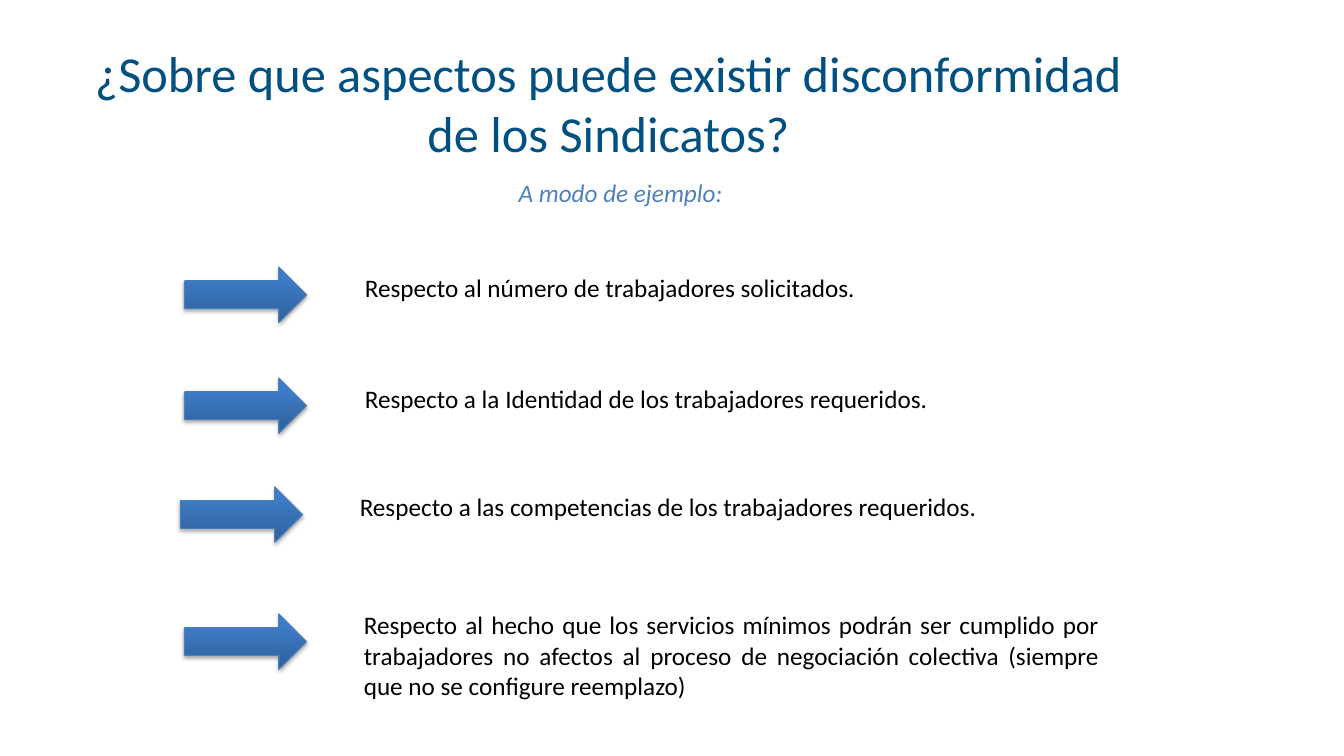
import pptx
import pptx.util
import pptx.oxml
import pptx.oxml.ns
import pptx.dml.color
import pptx.enum.shapes
import pptx.enum.text

Inches = pptx.util.Inches
ALIGN = pptx.enum.text.PP_ALIGN
ARROW_STOPS = [(0, "2F5F99"), (80, "3D7CC7"), (100, "3A7CCB")]

# Left and top of the arrow, then left, top, width and height of the text
ITEMS = [
    ((1.83, 2.65), (3.52, 2.65, 5.35, 0.4),
     "Respecto al número de trabajadores solicitados."),
    ((1.83, 3.75), (3.52, 3.75, 7.48, 0.4),
     "Respecto a la Identidad de los trabajadores requeridos."),
    ((1.79, 4.83), (3.47, 4.83, 7.76, 0.4),
     "Respecto a las competencias de los trabajadores requeridos."),
    ((1.83, 6.09), (3.51, 6, 7.49, 1.01),
     "Respecto al hecho que los servicios mínimos podrán ser cumplido por "
     "trabajadores no afectos al proceso de negociación colectiva (siempre "
     "que no se configure reemplazo)"),
]


def rgb(value):
    return pptx.dml.color.RGBColor.from_string(value)


def write(tf, text, size, color, align, italic=False):
    tf.word_wrap = True
    p = tf.paragraphs[0]
    p.alignment = align
    r = p.add_run()
    r.text = text
    r.font.name = "Calibri"
    r.font.size = pptx.util.Pt(size)
    r.font.italic = italic
    r.font.color.rgb = rgb(color)


def add_title(s, box, text):
    sp = s.shapes.title
    sp.left, sp.top, sp.width, sp.height = map(Inches, box)
    tf = sp.text_frame
    tf.margin_left = tf.margin_right = tf.margin_top = tf.margin_bottom = 0
    tf.vertical_anchor = pptx.enum.text.MSO_ANCHOR.MIDDLE
    write(tf, text, 36, "005082", ALIGN.CENTER)


def add_text(s, box, text, color, align, italic=False):
    sp = s.shapes.add_textbox(*map(Inches, box))
    write(sp.text_frame, text, 18, color, align, italic)


def add_arrow(s, left, top):
    sp = s.shapes.add_shape(pptx.enum.shapes.MSO_SHAPE.RIGHT_ARROW,
                            *map(Inches, (left, top, 1.21, 0.55)))
    sp.line.color.rgb = rgb("4B7EBC")
    sp.line.width = pptx.util.Pt(0.75)
    sp.shadow.inherit = False
    props = sp._element.spPr
    ns = pptx.oxml.ns.nsdecls("a")

    # Three-stop gradient, dark at the bottom
    stops = "".join(
        f'<a:gs pos="{pos * 1000}"><a:srgbClr val="{color}"/></a:gs>'
        for pos, color in ARROW_STOPS)
    props.find(pptx.oxml.ns.qn("a:ln")).addprevious(pptx.oxml.parse_xml(
        f'<a:gradFill {ns} rotWithShape="1"><a:gsLst>{stops}</a:gsLst>'
        '<a:lin ang="16200000" scaled="0"/></a:gradFill>'))

    # Soft shadow below
    blur, dist = pptx.util.Pt(3.1), pptx.util.Pt(1.8)
    props.find(pptx.oxml.ns.qn("a:effectLst")).append(pptx.oxml.parse_xml(
        f'<a:outerShdw {ns} blurRad="{blur}" dist="{dist}" dir="5400000" '
        'rotWithShape="0"><a:srgbClr val="000000"><a:alpha val="35000"/>'
        '</a:srgbClr></a:outerShdw>'))


def add_item(s, arrow, box, text):
    add_arrow(s, *arrow)
    add_text(s, box, text, "000000", ALIGN.JUSTIFY)


def main():
    prs = pptx.Presentation()
    prs.slide_width, prs.slide_height = Inches(13.33), Inches(7.5)
    s = prs.slides.add_slide(prs.slide_layouts[5])

    # Heading
    add_title(s, (0.84, 0.41, 10.39, 1.21),
              "¿Sobre que aspectos puede existir disconformidad de los Sindicatos?")
    add_text(s, (4.07, 1.71, 4.17, 0.4), "A modo de ejemplo:",
             "4F81BD", ALIGN.CENTER, italic=True)

    # Examples
    for arrow, box, text in ITEMS:
        add_item(s, arrow, box, text)

    prs.save("out.pptx")


if __name__ == "__main__":
    main()
